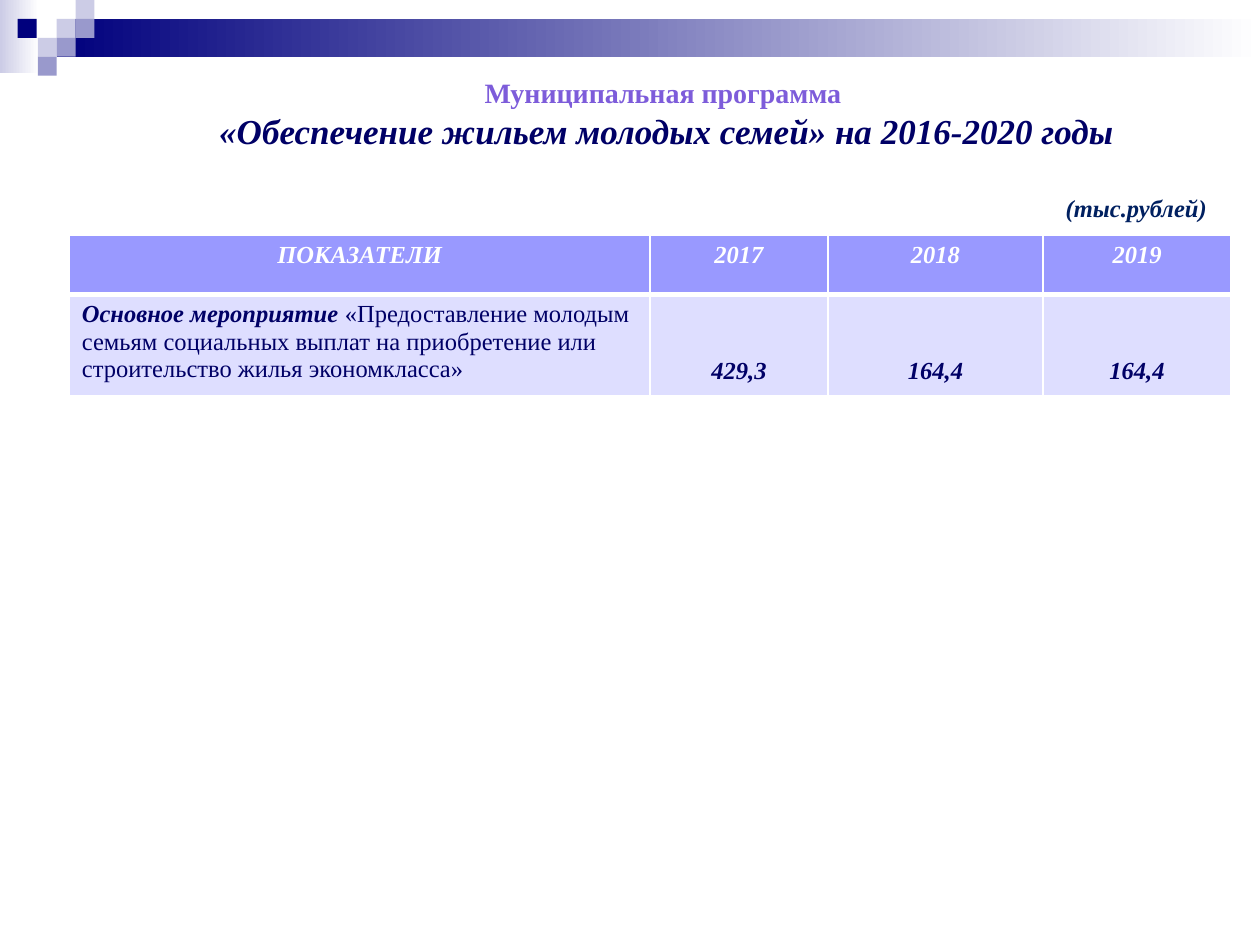
from dataclasses import dataclass

from lxml import etree
from pptx import Presentation
from pptx import util as u
from pptx.dml.color import RGBColor
from pptx.enum import shapes, text
from pptx.oxml.ns import qn

FONT = "Times New Roman"
COLORS = {
    "white": "FFFFFF",
    "navy": "00007D",
    "ink": "000066",
    "unit": "002060",
    "violet": "7D5CDA",
    "pale": "CCCCE6",
    "mid": "9999CC",
    "header": "9999FF",
    "body": "DEDEFF",
}


@dataclass
class Block:
    left: float
    top: float
    width: float
    height: float
    color: str
    fade: bool = False


@dataclass
class Run:
    words: str
    size: float
    color: str
    bold: bool = True
    italic: bool = True


SQUARE = 0.15
BLOCKS = [
    Block(0, 0, 0.31, 0.58, "pale", fade=True),
    Block(0.45, 0.15, 9.55, 0.3, "navy", fade=True),
] + [
    Block(left, top, SQUARE, SQUARE, color)
    for left, top, color in [
        (0.45, 0.15, "pale"), (0.6, 0, "pale"), (0.6, 0.15, "mid"),
        (0.3, 0.3, "pale"), (0.14, 0.15, "navy"), (0.45, 0.3, "mid"),
        (0.3, 0.45, "mid"),
    ]
]

COLUMN_WIDTHS = [4.61, 1.41, 1.71, 1.49]
ROW_HEIGHTS = [0.47, 0.79]
HEADINGS = ["ПОКАЗАТЕЛИ", "2017", "2018", "2019"]
MEASURE = [
    Run("Основное мероприятие ", 14, "ink"),
    Run("«Предоставление молодым семьям социальных выплат на приобретение "
        "или строительство жилья экономкласса»", 14, "ink", False, False),
]
AMOUNTS = ["429,3", "164,4", "164,4"]


def rgb(name: str) -> RGBColor:
    return RGBColor.from_string(COLORS[name])


def add_block(slide, block: Block) -> None:
    shape = slide.shapes.add_shape(
        shapes.MSO_SHAPE.RECTANGLE, u.Inches(block.left), u.Inches(block.top),
        u.Inches(block.width), u.Inches(block.height))
    shape.shadow.inherit = False
    shape.line.fill.background()
    if block.fade:
        shape.fill.gradient()
        shape.fill.gradient_angle = 0
        for stop, color, position in zip(
                shape.fill.gradient_stops, (block.color, "white"), (0, 1)):
            stop.color.rgb = rgb(color)
            stop.position = position
    else:
        shape.fill.solid()
        shape.fill.fore_color.rgb = rgb(block.color)


def write(frame, paragraphs: list[list[Run]], alignment) -> None:
    for index, runs in enumerate(paragraphs):
        paragraph = frame.add_paragraph() if index else frame.paragraphs[0]
        paragraph.alignment = alignment
        for item in runs:
            run = paragraph.add_run()
            run.text = item.words
            run.font.name = FONT
            run.font.size = u.Pt(item.size)
            run.font.bold = item.bold
            run.font.italic = item.italic
            run.font.color.rgb = rgb(item.color)


def add_text(slide, left: float, top: float, width: float, height: float,
             paragraphs: list[list[Run]], alignment, wrap: bool) -> None:
    box = slide.shapes.add_textbox(
        u.Inches(left), u.Inches(top), u.Inches(width), u.Inches(height))
    box.text_frame.word_wrap = wrap
    box.text_frame.auto_size = text.MSO_AUTO_SIZE.SHAPE_TO_FIT_TEXT
    write(box.text_frame, paragraphs, alignment)


def style_cell(cell, fill: str, thick_side: str) -> None:
    # Borders come before the fill in the cell properties
    properties = cell._tc.get_or_add_tcPr()
    for side in ("lnL", "lnR", "lnT", "lnB"):
        width = u.Pt(3 if side == thick_side else 1)
        line = etree.SubElement(properties, qn(f"a:{side}"), w=str(width))
        solid = etree.SubElement(line, qn("a:solidFill"))
        etree.SubElement(solid, qn("a:srgbClr"), val=COLORS["white"])
    cell.fill.solid()
    cell.fill.fore_color.rgb = rgb(fill)


def add_program_table(slide) -> None:
    table = slide.shapes.add_table(
        len(ROW_HEIGHTS), len(COLUMN_WIDTHS), u.Inches(0.55), u.Inches(1.87),
        u.Inches(sum(COLUMN_WIDTHS)), u.Inches(sum(ROW_HEIGHTS))).table
    for column, width in zip(table.columns, COLUMN_WIDTHS):
        column.width = u.Inches(width)
    for row, height in zip(table.rows, ROW_HEIGHTS):
        row.height = u.Inches(height)

    center = text.PP_ALIGN.CENTER
    for index, heading in enumerate(HEADINGS):
        cell = table.cell(0, index)
        style_cell(cell, "header", "lnB")
        write(cell.text_frame, [[Run(heading, 14, "white")]], center)

    label = table.cell(1, 0)
    style_cell(label, "body", "lnT")
    write(label.text_frame, [MEASURE], text.PP_ALIGN.LEFT)
    for index, amount in enumerate(AMOUNTS, start=1):
        cell = table.cell(1, index)
        style_cell(cell, "body", "lnT")
        cell.vertical_anchor = text.MSO_ANCHOR.BOTTOM
        cell.margin_bottom = u.Inches(0.09)
        write(cell.text_frame, [[Run(amount, 14, "ink")]], center)


def main() -> None:
    presentation = Presentation()
    presentation.slide_width = u.Inches(10)
    presentation.slide_height = u.Inches(7.5)
    slide = presentation.slides.add_slide(presentation.slide_layouts[6])

    # Header band and squares
    for block in BLOCKS:
        add_block(slide, block)

    # Title
    add_text(slide, 1.56, 0.55, 7.46, 0.71, [
        [Run("Муниципальная программа ", 16, "violet", italic=False)],
        [Run("«Обеспечение жильем молодых семей» на 2016-2020 годы", 20, "ink")],
    ], text.PP_ALIGN.CENTER, wrap=True)

    # Indicators and their unit
    add_program_table(slide)
    add_text(slide, 8.36, 1.48, 1.33, 0.34,
             [[Run("(тыс.рублей)", 14, "unit")]], text.PP_ALIGN.LEFT, wrap=False)

    presentation.save("out.pptx")


if __name__ == "__main__":
    main()
